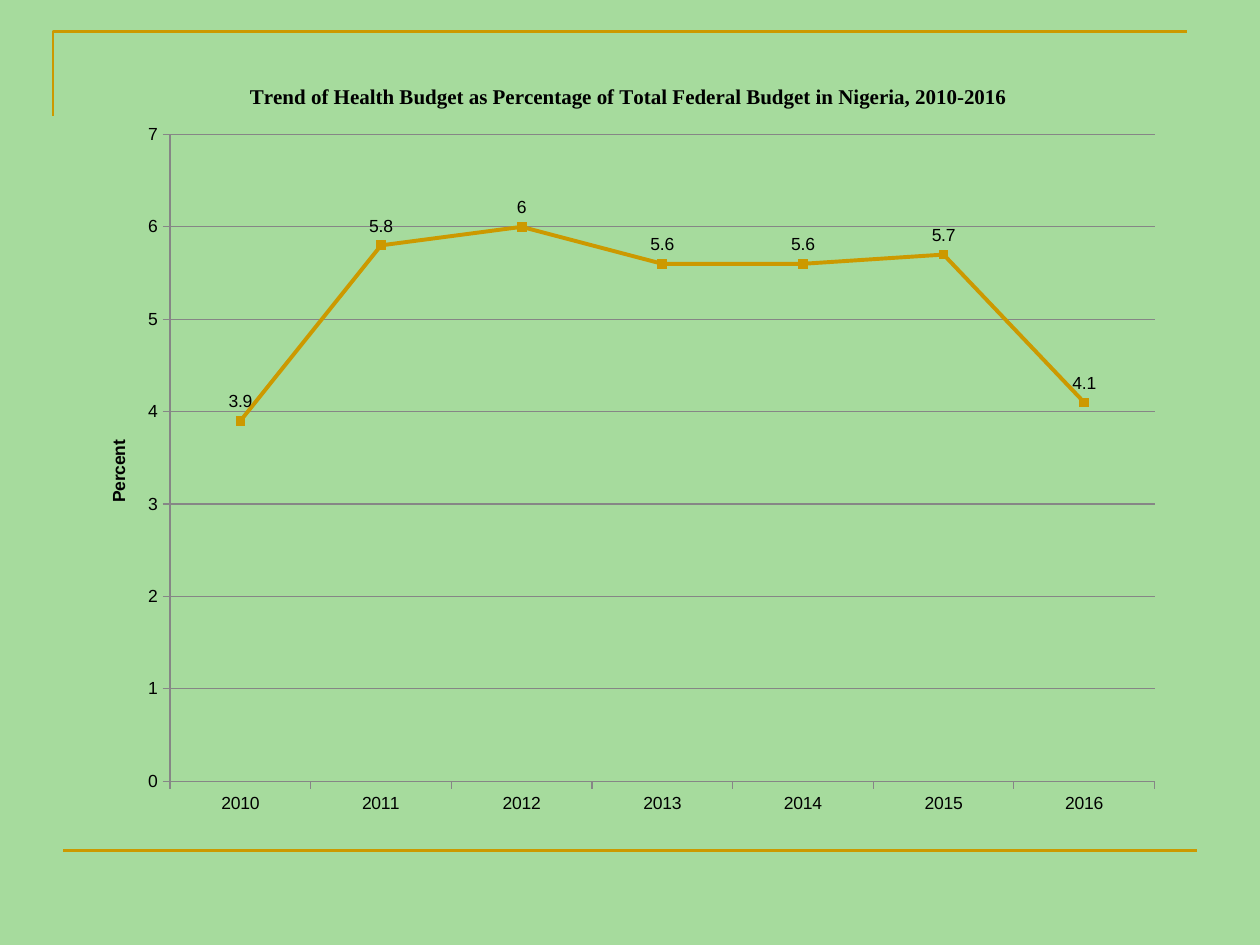
from lxml import etree
from pptx import Presentation
from pptx.chart.data import CategoryChartData
from pptx.dml.color import RGBColor
from pptx.enum.chart import XL_CHART_TYPE, XL_LABEL_POSITION, XL_MARKER_STYLE, XL_TICK_MARK
from pptx.enum.shapes import MSO_CONNECTOR
from pptx.oxml.ns import qn
from pptx.util import Inches, Pt

LINE_CHART = XL_CHART_TYPE.LINE_MARKERS
ABOVE = XL_LABEL_POSITION.ABOVE
SQUARE = XL_MARKER_STYLE.SQUARE
OUTSIDE = XL_TICK_MARK.OUTSIDE
STRAIGHT = MSO_CONNECTOR.STRAIGHT

GREEN, GOLD, GRAY, BLACK = "A6DB9D", "CC9900", "868686", "000000"
YEARS = [str(year) for year in range(2010, 2017)]
SHARES = [3.9, 5.8, 6, 5.6, 5.6, 5.7, 4.1]
TITLE = "Trend of Health Budget as Percentage of Total Federal Budget in Nigeria, 2010-2016"


def color(value):
    return RGBColor.from_string(value)


def set_values(target, values):
    for name, value in values.items():
        setattr(target, name, value)


def set_layout(parent, after=None, inner=False, **fractions):
    """Place a chart part by fractions of the chart's size."""
    for old in parent.findall(qn("c:layout")):
        parent.remove(old)
    layout = etree.Element(qn("c:layout"))
    manual = etree.SubElement(layout, qn("c:manualLayout"))
    settings = {"layoutTarget": "inner"} if inner else {}
    settings.update(xMode="edge", yMode="edge", **fractions)
    for name, value in settings.items():
        etree.SubElement(manual, qn("c:" + name)).set("val", str(value))
    if after is None:
        parent.insert(0, layout)
    else:
        after.addnext(layout)


class SlideBuilder:
    font = {"name": "Arial", "size": Pt(10), "bold": False}

    def __init__(self, deck):
        self.slide = deck.slides.add_slide(deck.slide_layouts[6])
        fill = self.slide.background.fill
        fill.solid()
        fill.fore_color.rgb = color(GREEN)

    def style_line(self, line, value, width):
        line.color.rgb = color(value)
        line.width = Pt(width)

    def style_font(self, font, **changes):
        set_values(font, {**self.font, **changes})
        font.color.rgb = color(BLACK)

    def corner(self, *points):
        start, *rest = [(Inches(x), Inches(y)) for x, y in points]
        builder = self.slide.shapes.build_freeform(*start)
        builder.add_line_segments(rest, close=False)
        shape = builder.convert_to_shape()
        shape.shadow.inherit = False
        shape.fill.background()
        self.style_line(shape.line, GOLD, 1.5)

    def rule(self, *ends):
        connector = self.slide.shapes.add_connector(STRAIGHT, *map(Inches, ends))
        self.style_line(connector.line, GOLD, 1.5)
        etree.SubElement(connector._element.spPr, qn("a:effectLst"))

    def chart_text(self, owner, text, x, y, **changes):
        frame = owner.text_frame
        frame.text = text
        self.style_font(frame.paragraphs[0].runs[0].font, bold=True, **changes)
        element = owner._element
        set_layout(element, element.find(qn("c:tx")), x=x, y=y)

    def line_chart(self, bounds, title, axis_title, categories, values):
        data = CategoryChartData()
        data.categories = categories
        data.add_series("Series 1", values)
        chart = self.slide.shapes.add_chart(LINE_CHART, *map(Inches, bounds), data).chart
        chart.has_legend = False
        self.style_font(chart.font)

        # Titles and plot area
        chart.has_title = True
        self.chart_text(chart.chart_title, title, 0.157, 0.035,
                        name="Times New Roman", size=Pt(12))
        value_axis = chart.value_axis
        value_axis.has_title = True
        self.chart_text(value_axis.axis_title, axis_title, 0.028, 0.494)
        set_layout(chart._chartSpace.chart.plotArea, inner=True,
                   x=0.088, y=0.105, w=0.893, h=0.832)

        # Axes
        set_values(value_axis, {"minimum_scale": 0, "maximum_scale": 7, "major_unit": 1,
                                "has_major_gridlines": True})
        self.style_line(value_axis.major_gridlines.format.line, GRAY, 0.75)
        for axis in (chart.category_axis, value_axis):
            axis.major_tick_mark = OUTSIDE
            self.style_line(axis.format.line, GRAY, 0.75)

        # Series and labels
        plot = chart.plots[0]
        plot.vary_by_categories = False
        series = plot.series[0]
        series.smooth = False
        self.style_line(series.format.line, GOLD, 2.25)
        marker = series.marker
        set_values(marker, {"style": SQUARE, "size": 5})
        marker.format.fill.solid()
        marker.format.fill.fore_color.rgb = color(GOLD)
        self.style_line(marker.format.line, GOLD, 0.75)
        labels = series.data_labels
        set_values(labels, {"show_value": True, "position": ABOVE})
        self.style_font(labels.font)


def main():
    deck = Presentation()
    set_values(deck, {"slide_width": Inches(10), "slide_height": Inches(7.5)})
    page = SlideBuilder(deck)

    # Frame lines
    page.corner((0.42, 0.92), (0.42, 0.25), (9.42, 0.25))
    page.rule(0.5, 6.75, 9.5, 6.75)

    # Budget trend
    page.line_chart((0.58, 0.42, 8.75, 6.17), TITLE, "Percent", YEARS, SHARES)
    deck.save("out.pptx")


if __name__ == "__main__":
    main()
